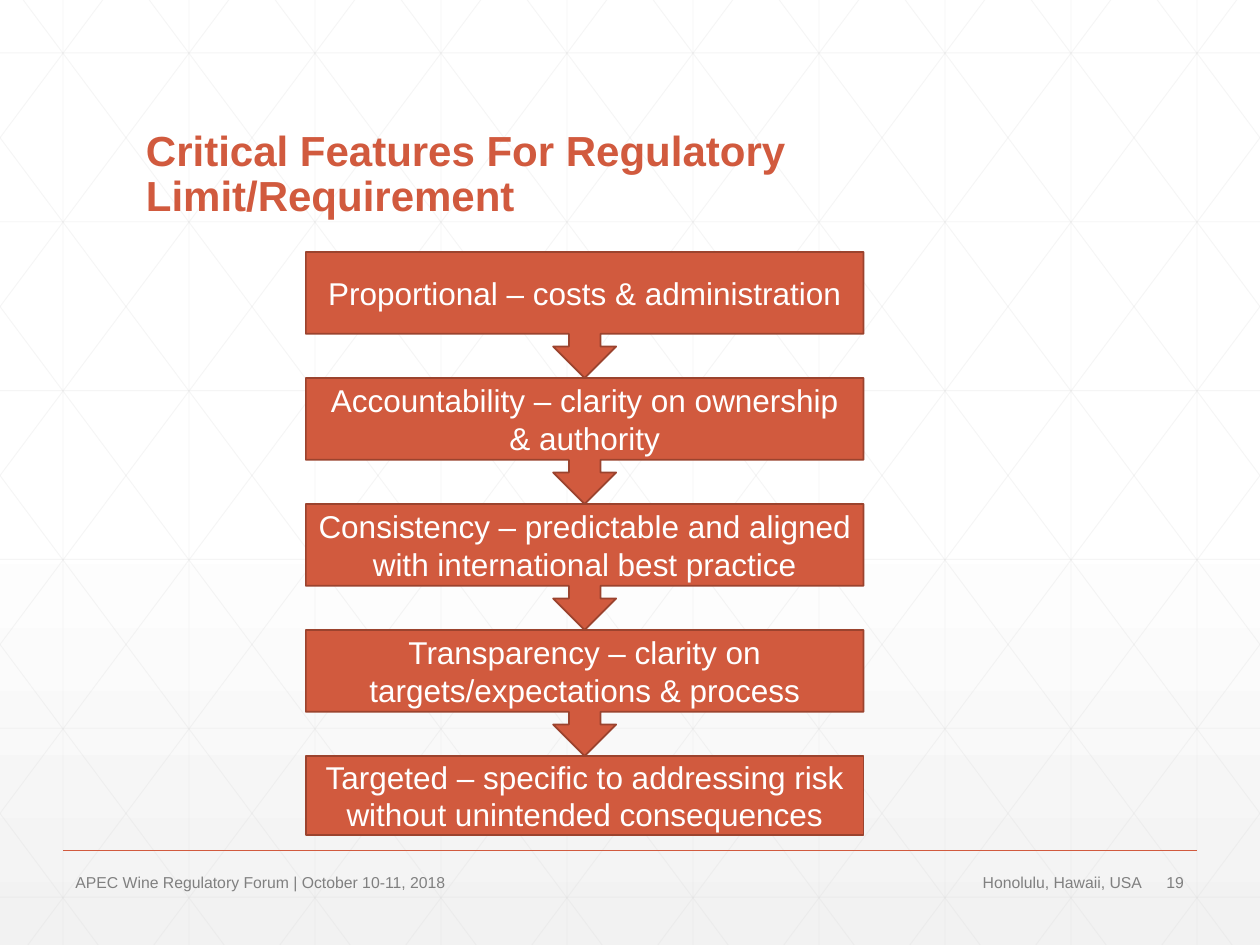
"""Build the slide on critical features for a regulatory limit or requirement."""
from dataclasses import dataclass

from pptx import Presentation
from pptx.dml.color import RGBColor
from pptx.enum.shapes import MSO_CONNECTOR, MSO_SHAPE
from pptx.enum.text import MSO_ANCHOR, PP_ALIGN
from pptx.oxml.ns import qn
from pptx.util import Pt
from lxml.etree import SubElement

WIDTH, HEIGHT = 720, 540


@dataclass(frozen=True)
class Theme:
    font: str = "Arial"
    accent: str = "D15A3E"
    outline: str = "9B432E"
    grid: str = "D9D9D9"
    muted: str = "808080"
    light: str = "FFFFFF"
    shade: str = "F2F2F2"
    title_size: int = 24
    step_size: int = 18
    footer_size: int = 9


class SlideBuilder:
    def __init__(self, slide, theme):
        self.slide = slide
        self.theme = theme

    def background(self):
        fill = self.slide.background.fill
        fill.gradient()
        fill.gradient_angle = 270
        colors = (self.theme.light, self.theme.shade)
        for stop, position, color in zip(fill.gradient_stops, (0.53, 1), colors):
            stop.position = position
            stop.color.rgb = RGBColor.from_string(color)

    def line(self, start, end, color, weight, opacity=100):
        connector = self.slide.shapes.add_connector(
            MSO_CONNECTOR.STRAIGHT, *(Pt(value) for value in (*start, *end)))
        connector.line.color.rgb = RGBColor.from_string(color)
        connector.line.width = Pt(weight)
        properties = connector._element.spPr
        if opacity < 100:
            tint = properties.find(".//" + qn("a:srgbClr"))
            SubElement(tint, qn("a:alpha")).set("val", str(opacity * 1000))
        SubElement(properties, qn("a:effectLst"))

    def fill_text(self, frame, text, size, color, align, anchor, bold=False, spacing=None):
        frame.word_wrap = True
        frame.vertical_anchor = anchor
        paragraph = frame.paragraphs[0]
        paragraph.alignment = align
        paragraph.line_spacing = spacing
        run = paragraph.add_run()
        run.text = text
        run.font.name = self.theme.font
        run.font.size = Pt(size)
        run.font.bold = bold
        run.font.color.rgb = RGBColor.from_string(color)

    def text(self, box, text, size, color, align=PP_ALIGN.LEFT,
             anchor=MSO_ANCHOR.MIDDLE, bold=False, spacing=None):
        label = self.slide.shapes.add_textbox(*(Pt(value) for value in box))
        self.fill_text(label.text_frame, text, size, color, align, anchor, bold, spacing)

    def step(self, kind, box, text):
        theme = self.theme
        step = self.slide.shapes.add_shape(kind, *(Pt(value) for value in box))
        step.shadow.inherit = False
        step.fill.solid()
        step.fill.fore_color.rgb = RGBColor.from_string(theme.accent)
        step.line.color.rgb = RGBColor.from_string(theme.outline)
        step.line.width = Pt(1)
        self.fill_text(step.text_frame, text, theme.step_size, theme.light,
                       PP_ALIGN.CENTER, MSO_ANCHOR.MIDDLE)

    def lattice(self):
        segments = [((x, 0), (x, HEIGHT)) for x in range(36, WIDTH, 72)]
        rows = [30.24 + 96.48 * row for row in range(6)]
        segments += [((0, y), (WIDTH, y)) for y in rows]
        run_length = 402.8
        slope = HEIGHT / run_length
        for column in range(-5, 10):
            origin = 13.3 + 72 * column
            left, right = max(0, origin), min(WIDTH, origin + run_length)
            top, bottom = (left - origin) * slope, (right - origin) * slope
            segments.append(((left, top), (right, bottom)))
            segments.append(((WIDTH - left, top), (WIDTH - right, bottom)))
        for start, end in segments:
            self.line(start, end, self.theme.grid, 0.5, opacity=25)


def main():
    theme = Theme()
    presentation = Presentation()
    presentation.slide_width, presentation.slide_height = Pt(WIDTH), Pt(HEIGHT)
    slide = presentation.slides.add_slide(presentation.slide_layouts[6])
    builder = SlideBuilder(slide, theme)

    builder.background()
    builder.lattice()
    builder.line((36, 486), (684, 486), theme.accent, 1)
    builder.text((76.3, 39.6, 567.4, 90),
                 "Critical Features For Regulatory Limit/Requirement",
                 theme.title_size, theme.accent, anchor=MSO_ANCHOR.BOTTOM,
                 bold=True, spacing=0.9)

    footers = (
        (659.5, 24.5, "19", PP_ALIGN.LEFT),
        (36, 362, "APEC Wine Regulatory Forum | October 10-11, 2018", PP_ALIGN.LEFT),
        (401.8, 257.8, "Honolulu, Hawaii, USA", PP_ALIGN.RIGHT),
    )
    for left, width, footer, align in footers:
        builder.text((left, 495.5, width, 17.3), footer,
                     theme.footer_size, theme.muted, align)

    features = (
        "Proportional – costs & administration",
        "Accountability – clarity on ownership & authority",
        "Consistency – predictable and aligned with international best practice",
        "Transparency – clarity on targets/expectations & process",
        "Targeted – specific to addressing risk without unintended consequences",
    )
    pitch = 72
    for index, feature in enumerate(features):
        is_last = index == len(features) - 1
        kind = MSO_SHAPE.RECTANGLE if is_last else MSO_SHAPE.DOWN_ARROW_CALLOUT
        height = 45 if is_last else pitch
        builder.step(kind, (174.8, 144 + pitch * index, 318.6, height), feature)

    presentation.save("out.pptx")


if __name__ == "__main__":
    main()
